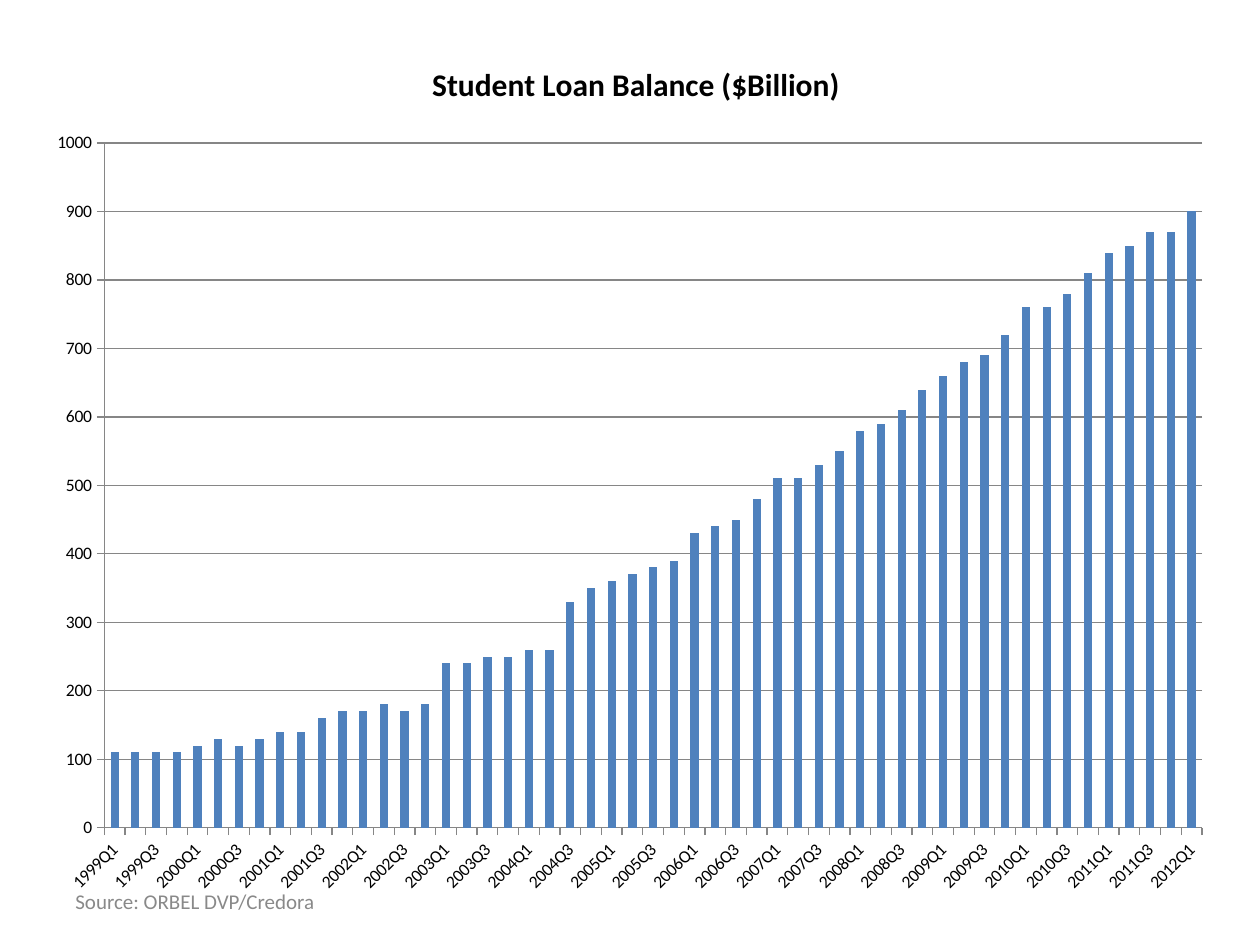
from lxml import etree
from pptx import Presentation
from pptx.chart.data import CategoryChartData
from pptx.dml.color import RGBColor
from pptx.enum import chart as ch, text
from pptx.oxml.ns import qn
from pptx.util import Inches, Pt

TITLE = "Student Loan Balance ($Billion)"
SOURCE = "Source: ORBEL DVP/Credora"
FONT = "Calibri"
FIRST_YEAR = 1999
BALANCES = [
    110, 110, 110, 110,  # 1999
    120, 130, 120, 130,
    140, 140, 160, 170,
    170, 180, 170, 180,
    240, 240, 250, 250,  # 2003
    260, 260, 330, 350,
    360, 370, 380, 390,
    430, 440, 450, 480,
    510, 510, 530, 550,  # 2007
    580, 590, 610, 640,
    660, 680, 690, 720,
    760, 760, 780, 810,
    840, 850, 870, 870,  # 2011
    900,
]


def style_font(font, size, color, bold=False):
    font.name, font.size, font.bold = FONT, Pt(size), bold
    font.color.rgb = RGBColor.from_string(color)


def set_layout(parent, index, **fractions):
    """Place a chart part by fractions of the chart area."""
    layout = parent.find(qn("c:layout"))
    if layout is None:
        layout = etree.Element(qn("c:layout"))
        parent.insert(index, layout)
    for child in list(layout):
        layout.remove(child)
    manual = etree.SubElement(layout, qn("c:manualLayout"))
    if "w" in fractions:
        etree.SubElement(manual, qn("c:layoutTarget")).set("val", "inner")
    for mode in ("xMode", "yMode"):
        etree.SubElement(manual, qn(f"c:{mode}")).set("val", "edge")
    for name, value in fractions.items():
        etree.SubElement(manual, qn(f"c:{name}")).set("val", str(value))


def add_balance_chart(s):
    data = CategoryChartData(number_format="0")
    data.categories = [f"{FIRST_YEAR + i // 4}Q{i % 4 + 1}" for i in range(len(BALANCES))]
    data.add_series("Series 1", BALANCES)
    chart = s.shapes.add_chart(
        ch.XL_CHART_TYPE.COLUMN_CLUSTERED,
        Inches(0.26), Inches(0.31), Inches(9.47), Inches(6.88), data).chart
    style_font(chart.font, 10, "000000")
    chart.has_legend = False

    chart.has_title = True
    title = chart.chart_title
    title.text_frame.text = TITLE
    style_font(title.text_frame.paragraphs[0].font, 18, "000000", bold=True)
    title.include_in_layout = False
    set_layout(title._element, 1, x=0.33, y=0.02)
    set_layout(chart._chartSpace.chart.plotArea, 0, x=0.06, y=0.12, w=0.92, h=0.79)

    plot = chart.plots[0]
    plot.gap_width = 150
    plot.vary_by_categories = False
    fill = plot.series[0].format.fill
    fill.solid()
    fill.fore_color.rgb = RGBColor.from_string("4F81BD")

    values, quarters = chart.value_axis, chart.category_axis
    values.minimum_scale, values.maximum_scale, values.major_unit = 0, 1000, 100
    values.has_major_gridlines = True
    values.tick_labels.number_format = "0"
    values.tick_labels.number_format_is_linked = False
    for axis in (values, quarters):
        axis.major_tick_mark = ch.XL_TICK_MARK.OUTSIDE
        style_font(axis.tick_labels.font, 10, "000000")
    for line in (values.format.line, quarters.format.line, values.major_gridlines.format.line):
        line.color.rgb = RGBColor.from_string("868686")
        line.width = Pt(0.75)
    body = quarters._element.find(qn("c:txPr")).find(qn("a:bodyPr"))
    body.set("rot", str(-45 * 60000))


def add_source(s):
    tf = s.shapes.add_textbox(Inches(0.5), Inches(6.95), Inches(2.33), Inches(0.4)).text_frame
    tf.word_wrap = True
    tf.vertical_anchor = text.MSO_ANCHOR.MIDDLE
    p = tf.paragraphs[0]
    p.text = SOURCE
    style_font(p.font, 12, "898989")


def main():
    prs = Presentation()
    prs.slide_width, prs.slide_height = Inches(10), Inches(7.5)
    s = prs.slides.add_slide(prs.slide_layouts[6])
    add_source(s)
    add_balance_chart(s)
    prs.save("out.pptx")


if __name__ == "__main__":
    main()
